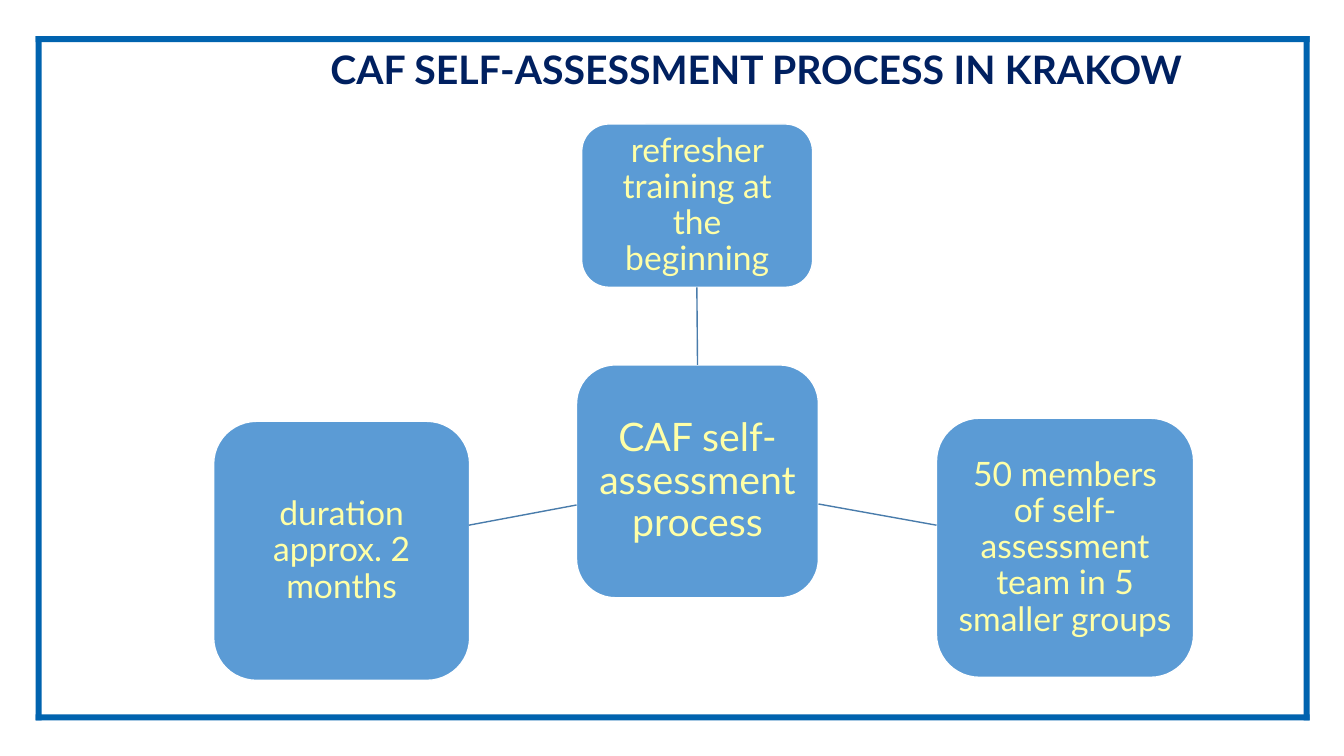
from dataclasses import dataclass

from lxml.etree import SubElement
from pptx import Presentation
from pptx.dml.color import RGBColor
from pptx.enum.shapes import MSO_CONNECTOR as Link, MSO_SHAPE as Form
from pptx.enum.text import MSO_ANCHOR as Anchor, PP_ALIGN as Align
from pptx.oxml.ns import qn
from pptx.util import Inches, Pt

WIDE, HIGH = Inches(13.33), Inches(7.5)
BLUE, NAVY, FRAME, EDGE = "5B9BD5", "002060", "0063AF", "497CAB"
CREAM, WHITE = "FFFFA7", "FFFFFF"


@dataclass
class Area:
    """A rectangle in percent of the slide's width and height."""
    left: float
    top: float
    width: float
    height: float

    def place(self) -> tuple:
        return (across(self.left), down(self.top),
                across(self.width), down(self.height))


@dataclass
class Node:
    """A rounded box with its label."""
    text: str
    area: Area
    size: int
    inset: float


@dataclass
class Edge:
    """A line from the central box to an outer one, in percent."""
    start: tuple
    end: tuple


def across(share: float) -> int:
    """Turn a percentage of the width into a length."""
    return int(WIDE * share / 100)


def down(share: float) -> int:
    """Turn a percentage of the height into a length."""
    return int(HIGH * share / 100)


def tint(code: str) -> RGBColor:
    """Read a hex colour."""
    return RGBColor.from_string(code)


def write(shape, text: str, size: int, color: str, bold: bool = False) -> None:
    """Set one centred paragraph in a shape."""
    frame = shape.text_frame
    frame.word_wrap = True
    frame.vertical_anchor = Anchor.MIDDLE
    para = frame.paragraphs[0]
    para.text = text
    para.alignment = Align.CENTER
    para.line_spacing = 0.9
    font = para.font
    font.name, font.size, font.bold = "Lato", Pt(size), bold
    font.color.rgb = tint(color)


def block(slide, form, area: Area, fill: str):
    """Draw a filled shape without outline or shadow."""
    shape = slide.shapes.add_shape(form, *area.place())
    shape.shadow.inherit = False
    shape.fill.solid()
    shape.fill.fore_color.rgb = tint(fill)
    shape.line.fill.background()
    return shape


def draw_node(slide, node: Node) -> None:
    """Draw a labelled rounded box."""
    shape = block(slide, Form.ROUNDED_RECTANGLE, node.area, BLUE)
    shape.line.color.rgb = tint(WHITE)
    shape.line.width = Pt(1)
    frame = shape.text_frame
    frame.margin_left = frame.margin_right = Inches(node.inset)
    frame.margin_top = frame.margin_bottom = Inches(node.inset)
    write(shape, node.text, node.size, CREAM)


def draw_edge(slide, edge: Edge) -> None:
    """Draw a thin line between two boxes."""
    (x1, y1), (x2, y2) = edge.start, edge.end
    line = slide.shapes.add_connector(
        Link.STRAIGHT, across(x1), down(y1), across(x2), down(y2))
    line.line.color.rgb = tint(EDGE)
    line.line.width = Pt(1)
    SubElement(line._element.spPr, qn("a:effectLst"))


def draw_frame(slide, area: Area, thick: float, tall: float) -> None:
    """Draw four bars along the sides of an area."""
    right = area.left + area.width - thick
    base = area.top + area.height - tall
    for left in (area.left, right):
        block(slide, Form.RECTANGLE,
              Area(left, area.top, thick, area.height), FRAME)
    for top in (area.top, base):
        block(slide, Form.RECTANGLE,
              Area(area.left, top, area.width, tall), FRAME)


NODES = [
    Node("CAF self-assessment process", Area(42.9, 48.27, 18, 30.8), 28, 0.08),
    Node("refresher training at the beginning",
         Area(43.28, 16.4, 17.18, 21.6), 24, 0.07),
    Node("50 members of self-assessment team in 5 smaller groups",
         Area(69.68, 55.33, 19.13, 34.27), 24, 0.07),
    Node("duration approx. 2 months",
         Area(15.9, 55.73, 19.05, 34.27), 24, 0.07),
]
EDGES = [
    Edge((51.9, 48.27), (51.85, 38)),
    Edge((60.9, 66.67), (69.68, 69.47)),
    Edge((42.9, 66.8), (34.88, 69.47)),
]


def main() -> None:
    """Build and save the slide."""
    deck = Presentation()
    deck.slide_width, deck.slide_height = WIDE, HIGH
    slide = deck.slides.add_slide(deck.slide_layouts[6])
    draw_frame(slide, Area(2.65, 4.8, 94.8, 90.5), 0.45, 0.8)
    for node in NODES:
        draw_node(slide, node)
    for edge in EDGES:
        draw_edge(slide, edge)
    title = slide.shapes.add_textbox(*Area(17.25, 5.47, 78, 8.13).place())
    write(title, "CAF SELF-ASSESSMENT PROCESS IN KRAKOW", 28, NAVY, True)
    deck.save("out.pptx")


if __name__ == "__main__":
    main()
